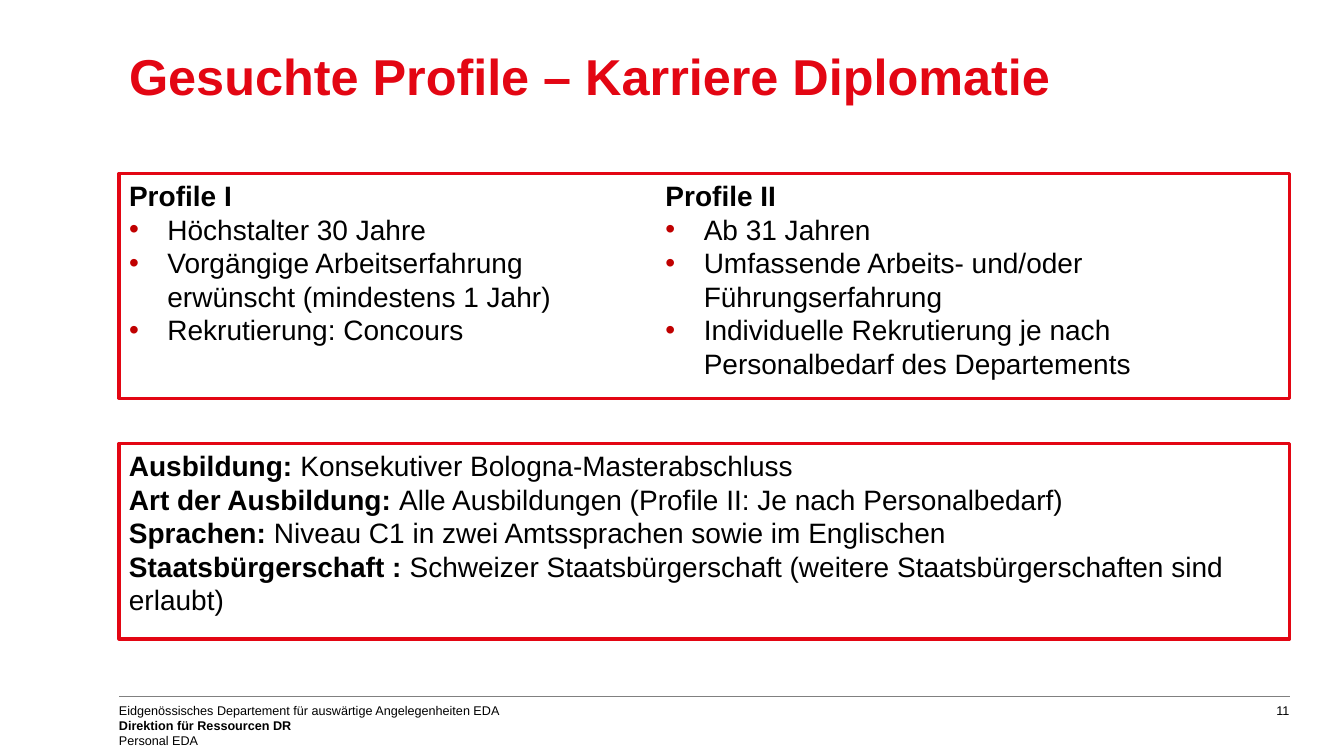
from lxml.etree import SubElement
from pptx import Presentation
from pptx.dml.color import RGBColor
from pptx.enum.shapes import MSO_CONNECTOR as CONNECTOR, MSO_SHAPE as SHAPE
from pptx.enum.text import MSO_ANCHOR as ANCHOR, MSO_AUTO_SIZE as AUTO_SIZE, PP_ALIGN as ALIGN
from pptx.oxml.ns import qn
from pptx.util import Inches, Pt

RED = RGBColor(0xE3, 0x06, 0x13)
BULLET_RED = RGBColor(0xC0, 0x00, 0x00)
BLACK = RGBColor(0, 0, 0)
GREY = RGBColor(0x80, 0x80, 0x80)

LEFT, WIDTH = 1.18, 11.61
PROFILE_SPLIT = 5.32
INDENT = 0.38

PROFILES = [
    ("Profile I", [
        "Höchstalter 30 Jahre",
        "Vorgängige Arbeitserfahrung erwünscht (mindestens 1 Jahr)",
        "Rekrutierung: Concours",
    ]),
    ("Profile II", [
        "Ab 31 Jahren",
        "Umfassende Arbeits- und/oder Führungserfahrung",
        "Individuelle Rekrutierung je nach Personalbedarf des Departements",
    ]),
]
REQUIREMENTS = [
    ("Ausbildung: ", "Konsekutiver Bologna-Masterabschluss"),
    ("Art der Ausbildung: ", "Alle Ausbildungen (Profile II: Je nach Personalbedarf)"),
    ("Sprachen: ", "Niveau C1 in zwei Amtssprachen sowie im Englischen"),
    ("Staatsbürgerschaft : ",
     "Schweizer Staatsbürgerschaft (weitere Staatsbürgerschaften sind erlaubt)"),
]
FOOTER = [
    ("Eidgenössisches Departement für auswärtige Angelegenheiten EDA", False),
    ("Direktion für Ressourcen DR", True),
    ("Personal EDA", False),
]


def place(shape, left, top, width, height):
    shape.left, shape.top = Inches(left), Inches(top)
    shape.width, shape.height = Inches(width), Inches(height)


def prepare_frame(shape):
    frame = shape.text_frame
    frame.word_wrap = True
    frame.auto_size = AUTO_SIZE.NONE
    frame.vertical_anchor = ANCHOR.TOP
    return frame


def add_paragraph(frame, spans, size, color=BLACK, align=ALIGN.LEFT):
    """Add a paragraph of (text, bold) spans, filling the empty first one."""
    para = frame.paragraphs[0]
    if para.runs:
        para = frame.add_paragraph()
    para.alignment = align
    para.space_before = Pt(0)
    for text, bold in spans:
        span = para.add_run()
        span.text = text
        span.font.name = "Arial"
        span.font.size = Pt(size)
        span.font.bold = bold
        span.font.color.rgb = color
    return para


def set_bullet(para, bulleted):
    properties = para._p.get_or_add_pPr()
    indent = Inches(INDENT) if bulleted else 0
    properties.set("marL", str(indent))
    properties.set("indent", str(-indent))
    if bulleted:
        bullet_color = SubElement(properties, qn("a:buClr"))
        SubElement(bullet_color, qn("a:srgbClr"), val=str(BULLET_RED))
        SubElement(properties, qn("a:buFont"), typeface="Arial")
        SubElement(properties, qn("a:buChar"), char="•")
    else:
        SubElement(properties, qn("a:buNone"))


def add_red_frame(slide, left, top, width, height):
    box = slide.shapes.add_shape(SHAPE.RECTANGLE, Inches(left), Inches(top),
                                 Inches(width), Inches(height))
    box.shadow.inherit = False
    box.fill.background()
    box.line.color.rgb = RED
    box.line.width = Pt(2.25)
    return box


def fill_title(title, left, top, width, height):
    place(title, left, top, width, height)
    add_paragraph(prepare_frame(title),
                  [("Gesuchte Profile – Karriere Diplomatie", True)], 36, RED)


def fill_profile(body, profile, left, top, width, height):
    heading, points = profile
    place(body, left, top, width, height)
    frame = prepare_frame(body)
    set_bullet(add_paragraph(frame, [(heading, True)], 20), False)
    for point in points:
        set_bullet(add_paragraph(frame, [(point, False)], 20), True)


def add_profiles(slide, left, top, width, height):
    bodies = list(slide.placeholders)[1:]
    columns = [(left, PROFILE_SPLIT), (left + PROFILE_SPLIT, width - PROFILE_SPLIT)]
    for body, profile, (column_left, column_width) in zip(bodies, PROFILES, columns):
        fill_profile(body, profile, column_left, top, column_width, height)
    add_red_frame(slide, left, top, width, height)


def add_requirements(slide, left, top, width, height):
    frame = prepare_frame(add_red_frame(slide, left, top, width, height))
    for label, detail in REQUIREMENTS:
        add_paragraph(frame, [(label, True), (detail, False)], 20)


def add_footer_text(slide, lines, align, left, top, width, height):
    box = slide.shapes.add_textbox(Inches(left), Inches(top), Inches(width), Inches(height))
    frame = prepare_frame(box)
    frame.margin_left = frame.margin_right = frame.margin_top = frame.margin_bottom = 0
    for line in lines:
        add_paragraph(frame, [line], 9, align=align)


def add_footer(slide, left, top, width, height):
    right, text_top = left + width, top + 0.06
    rule = slide.shapes.add_connector(CONNECTOR.STRAIGHT, Inches(right), Inches(top),
                                      Inches(left), Inches(top))
    rule.line.color.rgb = GREY
    rule.line.width = Pt(0.75)
    SubElement(rule._element.spPr, qn("a:effectLst"))
    add_footer_text(slide, FOOTER, ALIGN.LEFT, left, text_top, width, height - 0.06)
    add_footer_text(slide, [("11", False)], ALIGN.RIGHT, right - 0.4, text_top, 0.4, 0.15)


def main():
    deck = Presentation()
    deck.slide_width, deck.slide_height = Inches(13.33), Inches(7.5)
    slide = deck.slides.add_slide(deck.slide_layouts.get_by_name("Two Content"))
    fill_title(slide.shapes.title, LEFT, 0.4, WIDTH, 1.08)
    add_profiles(slide, LEFT, 1.72, WIDTH, 2.23)
    add_requirements(slide, LEFT, 4.4, WIDTH, 1.94)
    add_footer(slide, LEFT, 6.91, WIDTH, 0.59)
    deck.save("out.pptx")


if __name__ == "__main__":
    main()
